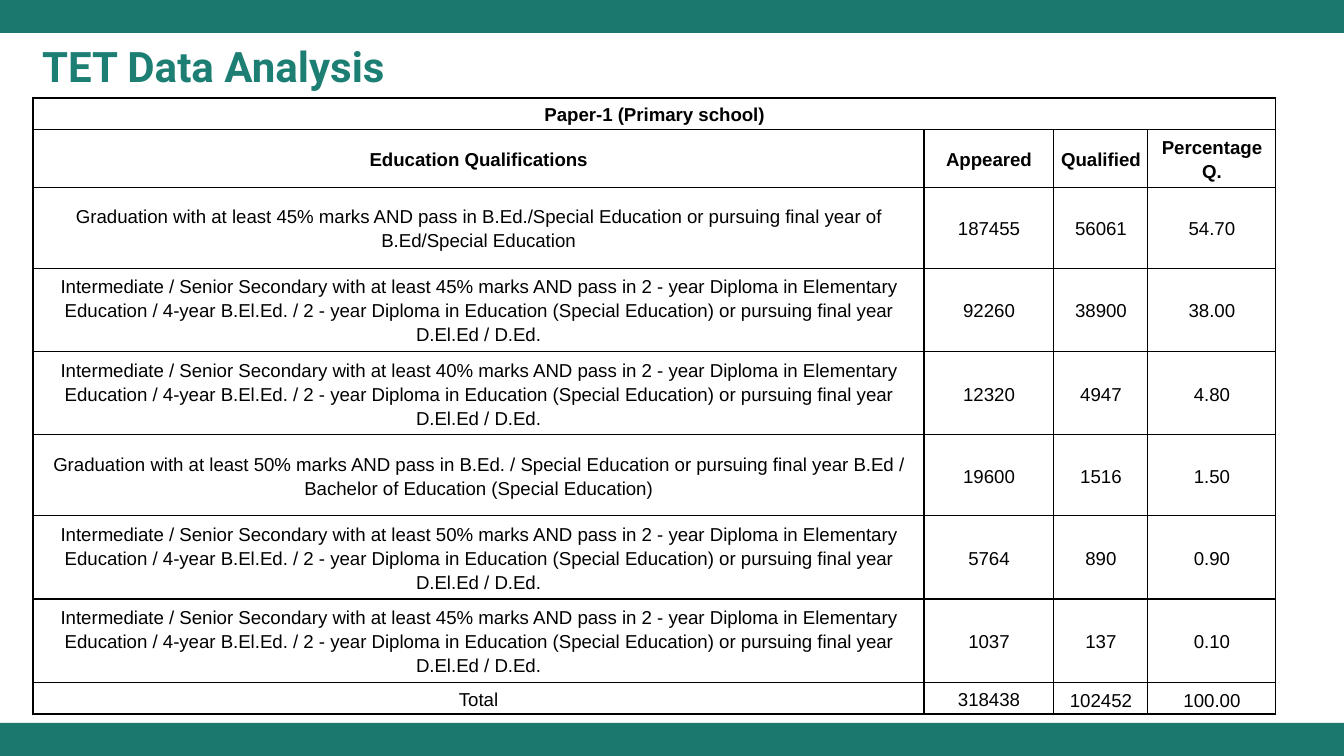
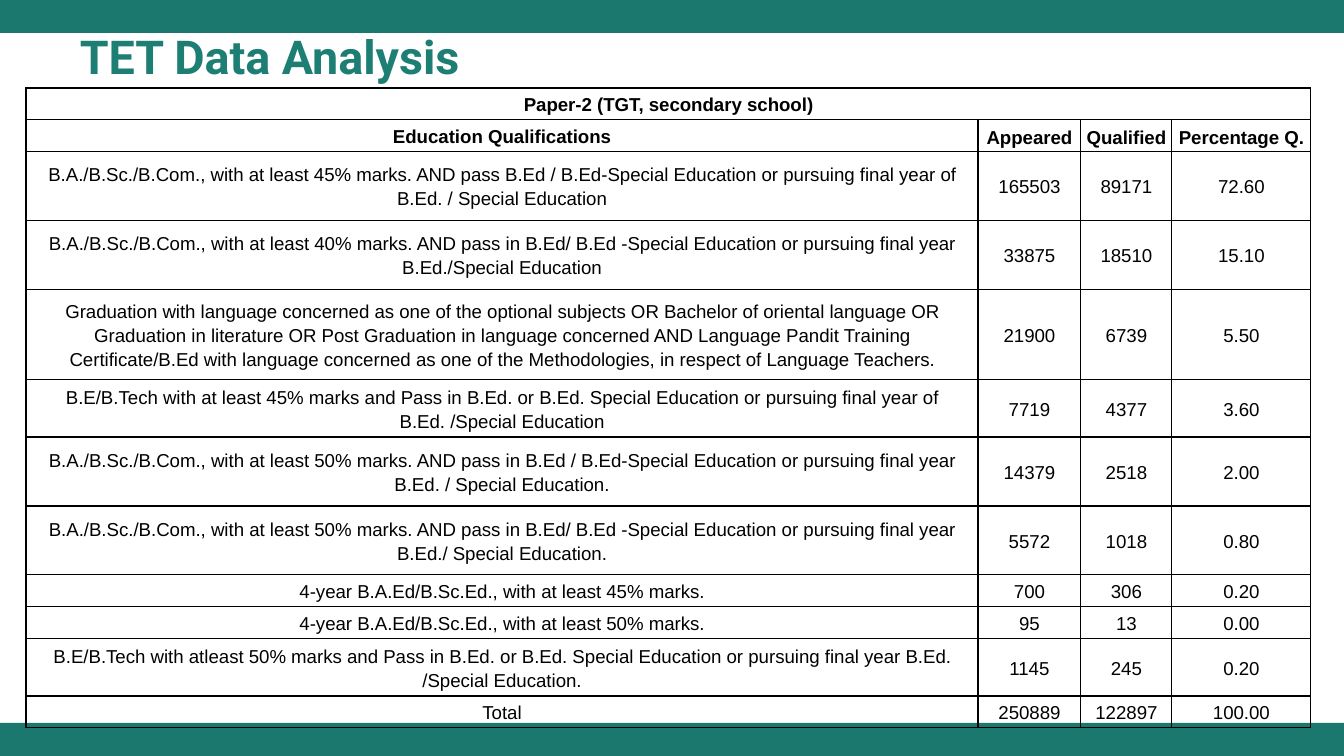
from dataclasses import dataclass
from typing import Any

import lxml.etree
import pptx
import pptx.dml.color
import pptx.enum.shapes
import pptx.enum.text
import pptx.oxml.ns
import pptx.util

PX = 914400 / 134.4
PAGE_WIDTH, PAGE_HEIGHT = 1344, 756
BAND_HEIGHT = 33
BAND_COLOR = pptx.dml.color.RGBColor(0x1B, 0x78, 0x6E)
TITLE_COLOR = pptx.dml.color.RGBColor(0x1D, 0x7E, 0x74)
INK = pptx.dml.color.RGBColor(0x00, 0x00, 0x00)
BORDER_WIDTH = pptx.util.Pt(0.67)
TITLE = "TET Data Analysis"
HEADINGS = ("Education Qualifications", "Appeared", "Qualified", "Percentage Q.")
MIDDLE = pptx.enum.text.MSO_ANCHOR.MIDDLE
BOTTOM = pptx.enum.text.MSO_ANCHOR.BOTTOM
LEFT = pptx.enum.text.PP_ALIGN.LEFT
CENTER = pptx.enum.text.PP_ALIGN.CENTER

Row = tuple[str, str, str, str]


@dataclass(frozen=True)
class Box:
    left: int
    top: int
    width: int
    height: int

    def emu(self) -> list[int]:
        return [px(n) for n in (self.left, self.top, self.width, self.height)]


@dataclass(frozen=True)
class ResultPage:
    """One page; low_cells holds the (row, column) places anchored at the bottom."""
    title_box: Box
    title_size: float
    caption: str
    left: int
    top: int
    columns: tuple[int, ...]
    heights: tuple[int, ...]
    results: tuple[Row, ...]
    low_cells: tuple[tuple[int, int], ...]


def px(length: int) -> int:
    return round(length * PX)


def diploma(marks: int) -> str:
    return (f"Intermediate / Senior Secondary with at least {marks}% marks AND pass in "
            "2 - year Diploma in Elementary Education / 4-year B.El.Ed. / 2 - year Diploma in "
            "Education (Special Education) or pursuing final year D.El.Ed / D.Ed.")


PAGES = (
    ResultPage(
        title_box=Box(32, 39, 433, 59), title_size=22.5,
        caption="Paper-1 (Primary school)", left=33, top=98,
        columns=(891, 130, 94, 128),
        heights=(30, 55, *[81] * 6, 30),
        results=(
            ("Graduation with at least 45% marks AND pass in B.Ed./Special Education or "
             "pursuing final year of B.Ed/Special Education", "187455", "56061", "54.70"),
            (diploma(45), "92260", "38900", "38.00"),
            (diploma(40), "12320", "4947", "4.80"),
            ("Graduation with at least 50% marks AND pass in B.Ed. / Special Education or "
             "pursuing final year B.Ed / Bachelor of Education (Special Education)",
             "19600", "1516", "1.50"),
            (diploma(50), "5764", "890", "0.90"),
            (diploma(45), "1037", "137", "0.10"),
            ("Total", "318438", "102452", "100.00"),
        ),
        low_cells=((8, 2), (8, 3)),
    ),
    ResultPage(
        title_box=Box(70, 24, 469, 71), title_size=25,
        caption="Paper-2 (TGT, secondary school)", left=26, top=88,
        columns=(952, 103, 91, 139),
        heights=(30, 30, 69, 69, 90, 54, 69, 69, 30, 29, 54, 29),
        results=(
            ("B.A./B.Sc./B.Com., with at least 45% marks. AND pass B.Ed / B.Ed-Special "
             "Education or pursuing final year of B.Ed. / Special Education",
             "165503", "89171", "72.60"),
            ("B.A./B.Sc./B.Com., with at least 40% marks. AND pass in B.Ed/ B.Ed -Special "
             "Education or pursuing final year B.Ed./Special Education",
             "33875", "18510", "15.10"),
            ("Graduation with language concerned as one of the optional subjects OR Bachelor "
             "of oriental language OR Graduation in literature OR Post Graduation in language "
             "concerned AND Language Pandit Training Certificate/B.Ed with language concerned "
             "as one of the Methodologies, in respect of Language Teachers.",
             "21900", "6739", "5.50"),
            ("B.E/B.Tech with at least 45% marks and Pass in B.Ed. or B.Ed. Special Education "
             "or pursuing final year of B.Ed. /Special Education", "7719", "4377", "3.60"),
            ("B.A./B.Sc./B.Com., with at least 50% marks. AND pass in B.Ed / B.Ed-Special "
             "Education or pursuing final year B.Ed. / Special Education.",
             "14379", "2518", "2.00"),
            ("B.A./B.Sc./B.Com., with at least 50% marks. AND pass in B.Ed/ B.Ed -Special "
             "Education or pursuing final year B.Ed./ Special Education.",
             "5572", "1018", "0.80"),
            ("4-year B.A.Ed/B.Sc.Ed., with at least 45% marks.", "700", "306", "0.20"),
            ("4-year B.A.Ed/B.Sc.Ed., with at least 50% marks.", "95", "13", "0.00"),
            ("B.E/B.Tech with atleast 50% marks and Pass in B.Ed. or B.Ed. Special Education "
             "or pursuing final year B.Ed. /Special Education.", "1145", "245", "0.20"),
            ("Total", "250889", "122897", "100.00"),
        ),
        low_cells=((1, 1), (1, 2), (1, 3)),
    ),
)


def write(frame: Any, text: str, *, size: float, font: str = "Arial", bold: bool = False,
          color: pptx.dml.color.RGBColor = INK, align: Any = CENTER,
          spacing: float = 1.15) -> None:
    para = frame.paragraphs[0]
    para.alignment = align
    para.line_spacing = spacing
    span = para.add_run()
    span.text = text
    span.font.size = pptx.util.Pt(size)
    span.font.name = font
    span.font.bold = bold
    span.font.color.rgb = color


def set_margins(holder: Any, across: int, down: int) -> None:
    holder.margin_left = holder.margin_right = px(across)
    holder.margin_top = holder.margin_bottom = px(down)


def add_band(page: Any, top: int) -> None:
    band = page.shapes.add_shape(pptx.enum.shapes.MSO_SHAPE.RECTANGLE,
                                 *Box(0, top, PAGE_WIDTH, BAND_HEIGHT).emu())
    band.shadow.inherit = False
    band.fill.solid()
    band.fill.fore_color.rgb = BAND_COLOR
    band.line.fill.background()


def add_title(page: Any, box: Box, size: float) -> None:
    frame = page.shapes.add_textbox(*box.emu()).text_frame
    frame.word_wrap = True
    frame.vertical_anchor = MIDDLE
    set_margins(frame, 10, 5)
    write(frame, TITLE, size=size, font="Roboto", bold=True, color=TITLE_COLOR,
          align=LEFT, spacing=0.9)


def add_borders(cell: Any) -> None:
    """Outline all four sides; the lines must come before the cell's fill."""
    properties = cell._tc.get_or_add_tcPr()
    qn = pptx.oxml.ns.qn
    for place, side in enumerate(("lnL", "lnR", "lnT", "lnB")):
        line = lxml.etree.Element(qn(f"a:{side}"), w=str(BORDER_WIDTH))
        fill = lxml.etree.SubElement(line, qn("a:solidFill"))
        lxml.etree.SubElement(fill, qn("a:srgbClr"), val=str(INK))
        properties.insert(place, line)


def add_results(page: Any, result: ResultPage) -> None:
    box = Box(result.left, result.top, sum(result.columns), sum(result.heights))
    table = page.shapes.add_table(len(result.heights), len(result.columns), *box.emu()).table
    table.first_row = table.horz_banding = False
    for column, width in zip(table.columns, result.columns):
        column.width = px(width)
    for row, height in zip(table.rows, result.heights):
        row.height = px(height)
    table.cell(0, 0).merge(table.cell(0, len(result.columns) - 1))
    for r, texts in enumerate(((result.caption,), HEADINGS, *result.results)):
        for c, cell in enumerate(table.rows[r].cells):
            cell.fill.background()
            add_borders(cell)
            set_margins(cell, 4, 3)
            cell.vertical_anchor = BOTTOM if (r, c) in result.low_cells else MIDDLE
            if c < len(texts):
                write(cell.text_frame, texts[c], size=10, bold=r < 2)


def main() -> None:
    deck = pptx.Presentation()
    deck.slide_width, deck.slide_height = px(PAGE_WIDTH), px(PAGE_HEIGHT)
    for result in PAGES:
        page = deck.slides.add_slide(deck.slide_layouts[6])
        for top in (PAGE_HEIGHT - BAND_HEIGHT, 0):
            add_band(page, top)
        add_title(page, result.title_box, result.title_size)
        add_results(page, result)
    deck.save("out.pptx")


if __name__ == "__main__":
    main()
